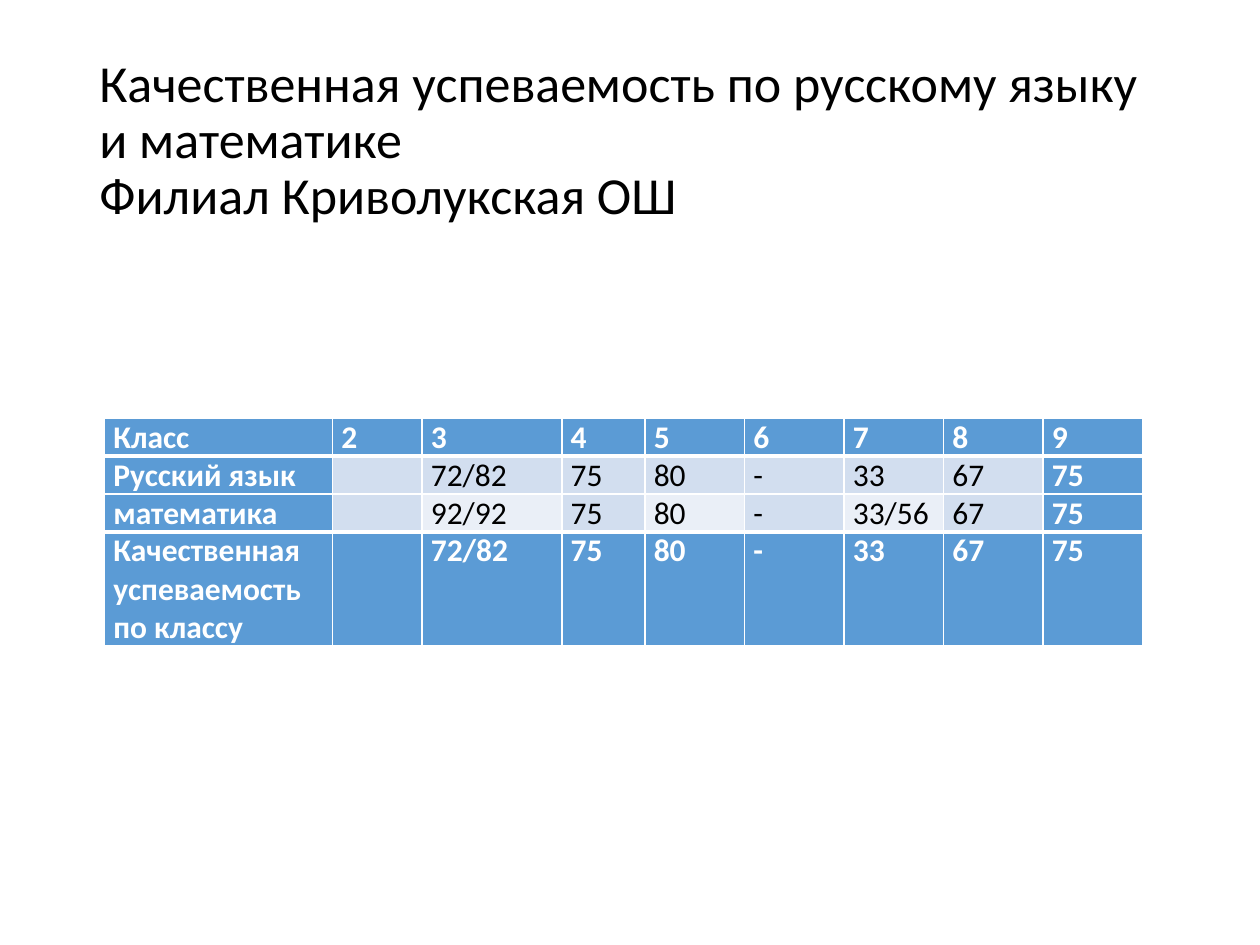
from dataclasses import dataclass

from lxml.etree import SubElement
from pptx import Presentation
from pptx.dml.color import RGBColor
from pptx.enum.text import MSO_ANCHOR
from pptx.oxml.ns import qn
from pptx.util import Inches, Pt


@dataclass(frozen=True)
class Theme:
    font: str = "Calibri"
    head: float = 29.7
    body: float = 18
    black: str = "000000"
    white: str = "FFFFFF"
    blue: str = "5B9BD5"
    band: str = "D2DEEF"
    pale: str = "EAEFF7"
    thin: float = 1
    thick: float = 3


class Deck:
    def __init__(self, theme):
        self.theme = theme
        self.prs = Presentation()
        self.prs.slide_width = Inches(10)
        self.prs.slide_height = Inches(7.5)
        self.slide = self.prs.slides.add_slide(self.prs.slide_layouts[6])

    def style(self, para, size, color, bold=False):
        for run in para.runs:
            font = run.font
            font.name = self.theme.font
            font.size = Pt(size)
            font.bold = bold
            font.color.rgb = RGBColor.from_string(color)

    def title(self, text, left, top, width, height):
        box = self.slide.shapes.add_textbox(
            Inches(left), Inches(top), Inches(width), Inches(height))
        frame = box.text_frame
        frame.word_wrap = True
        frame.vertical_anchor = MSO_ANCHOR.MIDDLE
        para = frame.paragraphs[0]
        para.text = text
        para.line_spacing = 0.9
        self.style(para, self.theme.head, self.theme.black)

    def border(self, cell, side, width):
        props = cell._tc.get_or_add_tcPr()
        line = SubElement(props, qn(f"a:ln{side}"), w=str(Pt(width)))
        fill = SubElement(line, qn("a:solidFill"))
        SubElement(fill, qn("a:srgbClr"), val=self.theme.white)

    def cell(self, cell, text, fill, strong, rules):
        theme = self.theme
        cell.margin_left = cell.margin_right = Inches(0.07)
        cell.margin_top = cell.margin_bottom = 0
        for side, width in rules.items():
            self.border(cell, side, width)
        cell.fill.solid()
        cell.fill.fore_color.rgb = RGBColor.from_string(fill)
        cell.text_frame.text = text
        color = theme.white if strong else theme.black
        self.style(cell.text_frame.paragraphs[0], theme.body, color, strong)

    def table(self, data, left, top, widths, heights):
        theme = self.theme
        last_row, last_col = len(data) - 1, len(widths) - 1
        table = self.slide.shapes.add_table(
            len(data), len(widths), Inches(left), Inches(top),
            Inches(sum(widths)), Inches(sum(heights))).table
        for col, width in zip(table.columns, widths):
            col.width = Inches(width)
        for row, height in zip(table.rows, heights):
            row.height = Inches(height)

        for r, row in enumerate(data):
            # Thick rules part the header and the total from the body
            above = theme.thick if r in (1, last_row) else theme.thin
            below = theme.thick if r in (0, last_row - 1) else theme.thin
            rules = {"L": theme.thin, "R": theme.thin,
                     "T": above, "B": below}
            for c, text in enumerate(row):
                strong = r in (0, last_row) or c in (0, last_col)
                if strong:
                    fill = theme.blue
                elif r % 2 or c % 2:
                    fill = theme.band
                else:
                    fill = theme.pale
                self.cell(table.cell(r, c), text, fill, strong, rules)

    def save(self):
        self.prs.save("out.pptx")


def main():
    deck = Deck(Theme())

    # Heading
    deck.title("Качественная успеваемость по русскому языку и математике\v"
               "Филиал Криволукская ОШ", 0.69, 0.4, 8.62, 1.45)

    # Results by class
    data = [
        ["Класс", "2", "3", "4", "5", "6", "7", "8", "9"],
        ["Русский язык", "", "72/82", "75", "80", "-", "33", "67", "75"],
        ["математика", "", "92/92", "75", "80", "-", "33/56", "67", "75"],
        ["Качественная успеваемость по классу",
         "", "72/82", "75", "80", "-", "33", "67", "75"],
    ]
    widths = [1.81, 0.71, 1.11, 0.66] + [0.79] * 5
    deck.table(data, 0.83, 3.32, widths, [0.3, 0.3, 0.3, 0.9])

    deck.save()


if __name__ == "__main__":
    main()
